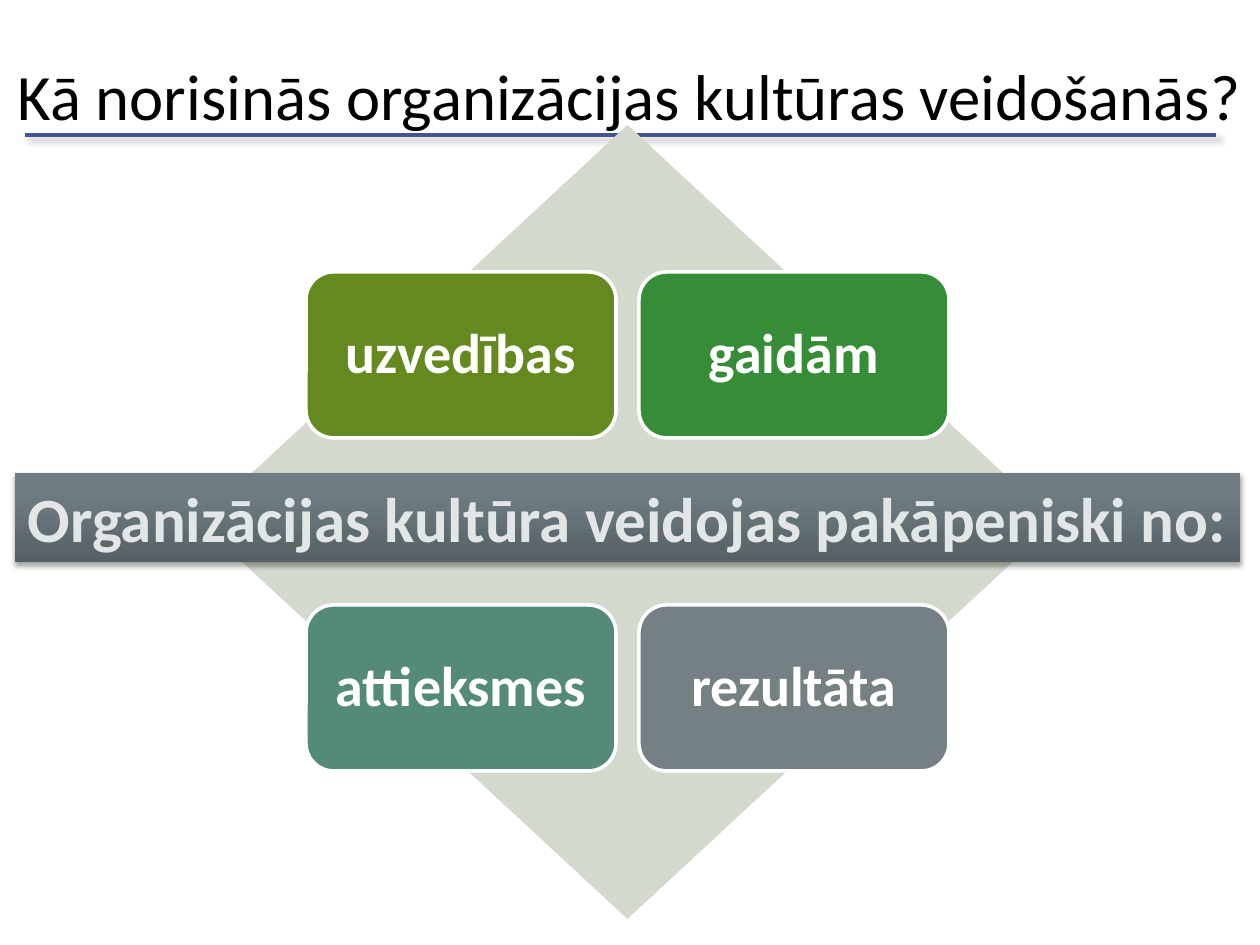
import copy

import lxml.etree
import pptx
import pptx.util
import pptx.dml.color
import pptx.enum.shapes
import pptx.enum.text
import pptx.oxml.ns

RGB = pptx.dml.color.RGBColor
SHAPE = pptx.enum.shapes.MSO_SHAPE
ALIGN = pptx.enum.text.PP_ALIGN
qn = pptx.oxml.ns.qn

BLACK = RGB(0x00, 0x00, 0x00)
WHITE = RGB(0xFF, 0xFF, 0xFF)
BLUE = RGB(0x42, 0x56, 0x8D)
SAGE = RGB(0xD3, 0xDA, 0xCD)
OLIVE = RGB(0x63, 0x89, 0x1F)
GREEN = RGB(0x37, 0x8D, 0x37)
TEAL = RGB(0x53, 0x8B, 0x78)
GRAY = RGB(0x75, 0x80, 0x85)
PALE = RGB(0xE3, 0xE6, 0xE7)
SLATE = [(0, RGB(0x56, 0x60, 0x65)), (0.8, RGB(0x6F, 0x7D, 0x83)),
         (1, RGB(0x6F, 0x7E, 0x84))]


def px(n):
    return round(n * 914400 / 126)


def write(shape, text, size, color, bold=False, align=ALIGN.CENTER,
          inset=None, gap=None, wrap=True):
    frame = shape.text_frame
    frame.word_wrap = wrap
    frame.auto_size = pptx.enum.text.MSO_AUTO_SIZE.NONE
    frame.vertical_anchor = pptx.enum.text.MSO_ANCHOR.MIDDLE
    if inset is not None:
        frame.margin_left = frame.margin_right = px(inset)
        frame.margin_top = frame.margin_bottom = px(inset)
    para = frame.paragraphs[0]
    para.alignment = align
    para.line_spacing = gap
    run = para.add_run()
    run.text = text
    run.font.name = "Calibri"
    run.font.size = pptx.util.Pt(size)
    run.font.bold = bold
    run.font.color.rgb = color


def shade(shape, alpha, blur, dist, angle):
    props = shape.element.spPr
    effects = props.find(qn("a:effectLst"))
    if effects is None:
        effects = lxml.etree.SubElement(props, qn("a:effectLst"))
    drop = lxml.etree.SubElement(
        effects, qn("a:outerShdw"), blurRad=str(pptx.util.Pt(blur)),
        dist=str(pptx.util.Pt(dist)), dir=str(angle * 60000),
        algn="tl", rotWithShape="0")
    tint = lxml.etree.SubElement(drop, qn("a:srgbClr"), val=str(BLACK))
    lxml.etree.SubElement(tint, qn("a:alpha"), val=str(alpha * 1000))


class Deck:
    def __init__(self):
        self.show = pptx.Presentation()
        self.show.slide_width = px(1260)
        self.show.slide_height = px(945)
        self.slide = self.show.slides.add_slide(self.show.slide_layouts[5])

    def title(self, text, x, y, w, h):
        head = self.slide.shapes.title
        head.left, head.top, head.width, head.height = map(px, (x, y, w, h))
        write(head, text, 37, BLACK, align=ALIGN.LEFT)

    def rule(self, x, y, end):
        line = self.slide.shapes.add_connector(
            pptx.enum.shapes.MSO_CONNECTOR.STRAIGHT,
            px(x), px(y), px(end), px(y))
        line.line.color.rgb = BLUE
        line.line.width = pptx.util.Pt(2.25)
        shade(line, 40, 4, 3, 45)
        self.slide.shapes.title.element.addprevious(line.element)

    def shape(self, kind, x, y, w, h, fill=None, edge=None):
        item = self.slide.shapes.add_shape(kind, *map(px, (x, y, w, h)))
        item.shadow.inherit = False
        if fill is not None:
            item.fill.solid()
            item.fill.fore_color.rgb = fill
        if edge is None:
            item.line.fill.background()
        else:
            item.line.color.rgb = edge
            item.line.width = pptx.util.Pt(2)
        return item

    def card(self, text, x, y, fill):
        item = self.shape(SHAPE.ROUNDED_RECTANGLE, x, y, 310, 166, fill, WHITE)
        write(item, text, 32, WHITE, bold=True, inset=16, gap=0.9)

    def band(self, text, x, y, w, h):
        item = self.shape(SHAPE.RECTANGLE, x, y, w, h)
        item.fill.gradient()
        item.fill.gradient_angle = 90
        stops = item.element.spPr.find(".//" + qn("a:gsLst"))
        stops.append(copy.deepcopy(stops[-1]))
        for stop, (place, color) in zip(item.fill.gradient_stops, SLATE):
            stop.position = place
            stop.color.rgb = color
        shade(item, 35, 3.1, 1.8, 90)
        write(item, text, 36, PALE, bold=True, wrap=False)


def main():
    deck = Deck()
    deck.title("Kā norisinās organizācijas kultūras veidošanās?",
               5, 16, 1255, 158)
    deck.rule(25, 135, 1216)
    deck.shape(SHAPE.DIAMOND, 199, 125, 857, 794, SAGE)
    cards = [("uzvedības", OLIVE), ("gaidām", GREEN),
             ("attieksmes", TEAL), ("rezultāta", GRAY)]
    for i, (text, fill) in enumerate(cards):
        row, col = divmod(i, 2)
        deck.card(text, 306 + 333 * col, 272 + 333 * row, fill)
    deck.band("Organizācijas kultūra veidojas pakāpeniski no:",
              15, 473, 1225, 89)
    deck.show.save("out.pptx")


if __name__ == "__main__":
    main()
